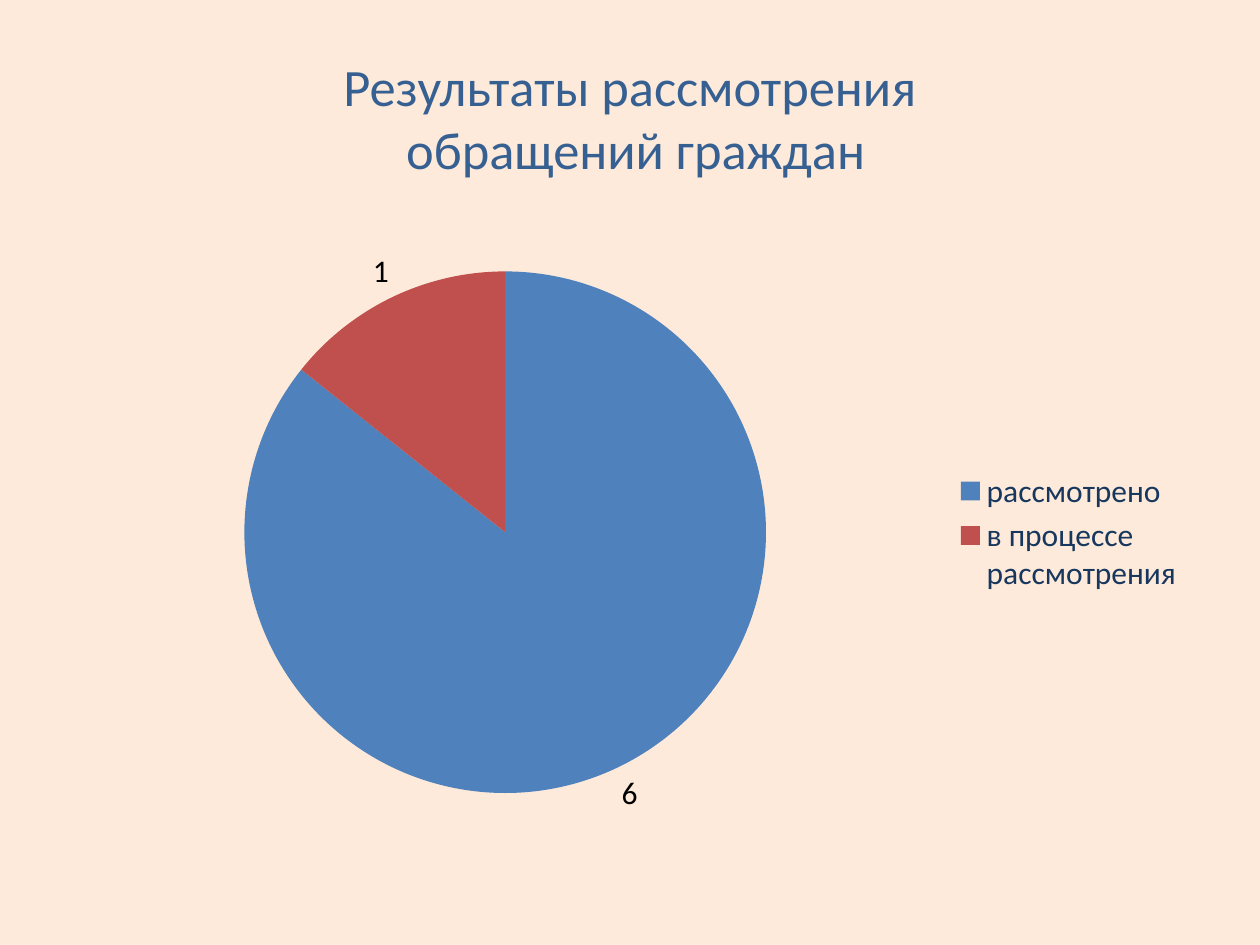
import pptx
import pptx.chart.data
import pptx.dml.color
import pptx.enum.chart
import pptx.enum.text
import pptx.oxml
import pptx.oxml.ns
import pptx.util
from pptx.util import Inches


def rgb(value):
    return pptx.dml.color.RGBColor.from_string(value)


prs = pptx.Presentation()
prs.slide_width, prs.slide_height = Inches(10), Inches(7.5)
s = prs.slides.add_slide(prs.slide_layouts[5])
s.background.fill.solid()
s.background.fill.fore_color.rgb = rgb("FDEADA")

# Title
title = s.shapes.title
title.left, title.top = Inches(0.5), Inches(0.3)
title.width, title.height = Inches(9), Inches(1.25)
tf = title.text_frame
tf.vertical_anchor = pptx.enum.text.MSO_ANCHOR.MIDDLE
p = tf.paragraphs[0]
p.alignment = pptx.enum.text.PP_ALIGN.CENTER
for i, line in enumerate(["Результаты рассмотрения", " обращений граждан"]):
    if i:
        p.add_line_break()
    r = p.add_run()
    r.text = line
    r.font.size = pptx.util.Pt(30)
    r.font.name = "Calibri"
    r.font.color.rgb = rgb("376092")

# Pie of review results
data = pptx.chart.data.CategoryChartData()
data.categories = ["рассмотрено", "в процессе рассмотрения"]
data.add_series("Series 1", [6, 1])
chart = s.shapes.add_chart(
    pptx.enum.chart.XL_CHART_TYPE.PIE,
    Inches(0.5), Inches(1.75), Inches(9), Inches(4.95), data).chart
chart.has_title = False
chart.font.size = pptx.util.Pt(18)
chart.font.name = "Calibri"
chart.font.color.rgb = rgb("000000")

chart.has_legend = True
legend = chart.legend
legend.position = pptx.enum.chart.XL_LEGEND_POSITION.RIGHT
legend.include_in_layout = False
legend.font.size = pptx.util.Pt(18)
legend.font.name = "Calibri"
legend.font.color.rgb = rgb("17375E")

plot = chart.plots[0]
plot.vary_by_categories = True
for i, color in enumerate(["4F81BD", "C0504D"]):
    fill = plot.series[0].points[i].format.fill
    fill.solid()
    fill.fore_color.rgb = rgb(color)

plot.has_data_labels = True
labels = plot.data_labels
labels.show_value = True
labels.show_percentage = False
labels.position = pptx.enum.chart.XL_LABEL_POSITION.OUTSIDE_END

# Fixed place of the pie, as fractions of the chart area
area = chart.plots[0]._element.getparent()
for old in area.findall(pptx.oxml.ns.qn("c:layout")):
    area.remove(old)
place = {"x": 0.16, "y": 0.08, "w": 0.46, "h": 0.84}
area.insert(0, pptx.oxml.parse_xml(
    f'<c:layout {pptx.oxml.ns.nsdecls("c")}><c:manualLayout>'
    '<c:layoutTarget val="inner"/><c:xMode val="edge"/><c:yMode val="edge"/>'
    + "".join(f'<c:{k} val="{v}"/>' for k, v in place.items())
    + "</c:manualLayout></c:layout>"))

prs.save("out.pptx")
